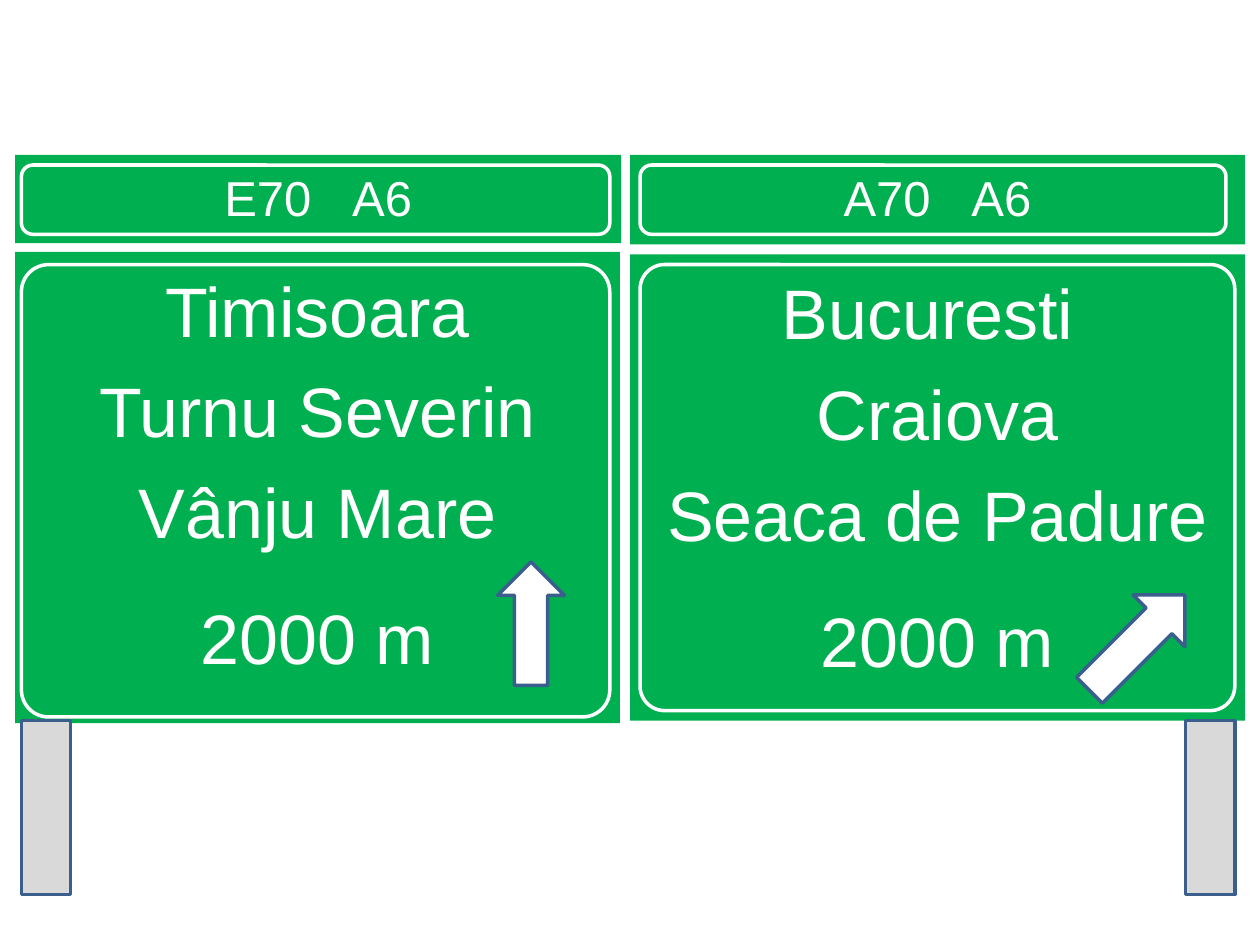
from pptx import Presentation
from pptx.dml.color import RGBColor
from pptx.enum.shapes import MSO_SHAPE
from pptx.enum.text import MSO_ANCHOR, PP_ALIGN
from pptx.util import Inches, Pt

RECTANGLE = MSO_SHAPE.RECTANGLE
ROUNDED = MSO_SHAPE.ROUNDED_RECTANGLE
UP_ARROW = MSO_SHAPE.UP_ARROW
RIGHT_ARROW = MSO_SHAPE.RIGHT_ARROW
TOP, MIDDLE = MSO_ANCHOR.TOP, MSO_ANCHOR.MIDDLE
CENTER = PP_ALIGN.CENTER

THEME = {
    "font": "Arial",
    "green": RGBColor(0x00, 0xB0, 0x50),
    "white": RGBColor(0xFF, 0xFF, 0xFF),
    "grey": RGBColor(0xD9, 0xD9, 0xD9),
    "blue": RGBColor(0x3A, 0x5F, 0x8C),
    "line": 2,
    "route_size": 28,
    "place_size": 40,
    "first_space": 4,
    "place_space": 9.6,
    "distance_space": 24,
    "route_gap": 15.6,
}

SIGNS = [
    {
        "routes": ["E70", "A6"],
        "places": ["Timisoara", "Turnu Severin", "Vânju Mare"],
        "distance": "2000 m",
        "route_panel": (0.12, 1.23, 4.81, 0.7),
        "place_panel": (0.12, 2, 4.8, 3.74),
        "route_border": (0.17, 1.31, 4.67, 0.55),
        "place_border": (0.17, 2.1, 4.67, 3.59),
        "corner": 0.06,
        "arrow": (UP_ARROW, (3.95, 4.46, 0.53, 0.98), 0),
        "post_left": 0.17,
    },
    {
        "routes": ["A70", "A6"],
        "places": ["Bucuresti ", "Craiova", "Seaca de Padure"],
        "distance": "2000 m",
        "route_panel": (5, 1.23, 4.88, 0.71),
        "place_panel": (5, 2.02, 4.88, 3.7),
        "route_border": (5.08, 1.31, 4.65, 0.55),
        "place_border": (5.08, 2.1, 4.72, 3.54),
        "corner": 0.055,
        "arrow": (RIGHT_ARROW, (8.49, 4.81, 1.07, 0.58), 315),
        "post_left": 9.41,
    },
]
POST_TOP, POST_WIDTH, POST_HEIGHT = 5.72, 0.39, 1.38


def add_box(slide, kind, box, fill=None, line=None):
    shape = slide.shapes.add_shape(kind, *map(Inches, box))
    shape.shadow.inherit = False
    if fill is None:
        shape.fill.background()
    else:
        shape.fill.solid()
        shape.fill.fore_color.rgb = THEME[fill]
    if line is None:
        shape.line.fill.background()
    else:
        shape.line.color.rgb = THEME[line]
        shape.line.width = Pt(THEME["line"])
    return shape


def add_panel(slide, box, anchor, bottom_inset):
    frame = add_box(slide, RECTANGLE, box, fill="green").text_frame
    frame.word_wrap = True
    frame.vertical_anchor = anchor
    frame.margin_left = frame.margin_right = Inches(0.1)
    frame.margin_top = Inches(0.12)
    frame.margin_bottom = Inches(bottom_inset)
    return frame


def format_paragraph(paragraph, size, space):
    paragraph.alignment = CENTER
    paragraph.space_before = Pt(space)
    for run in paragraph.runs:
        run.font.name = THEME["font"]
        run.font.size = Pt(size)
        run.font.color.rgb = THEME["white"]


def add_routes(slide, sign):
    frame = add_panel(slide, sign["route_panel"], MIDDLE, 0.16)
    paragraph = frame.paragraphs[0]
    road, motorway = sign["routes"]
    for text in (road, " ", motorway):
        run = paragraph.add_run()
        run.text = text
        if text == " ":
            run._r.get_or_add_rPr().set("spc", str(round(THEME["route_gap"] * 100)))
    format_paragraph(paragraph, THEME["route_size"], THEME["first_space"])


def add_places(slide, sign):
    frame = add_panel(slide, sign["place_panel"], TOP, 0.05)
    lines = sign["places"] + [sign["distance"]]
    frame.text = "\n".join(lines)
    between = [THEME["place_space"]] * (len(lines) - 2)
    spaces = [THEME["first_space"], *between, THEME["distance_space"]]
    for paragraph, space in zip(frame.paragraphs, spaces):
        format_paragraph(paragraph, THEME["place_size"], space)


def add_sign(slide, sign):
    add_routes(slide, sign)
    add_places(slide, sign)
    kind, box, rotation = sign["arrow"]
    arrow = add_box(slide, kind, box, fill="white", line="blue")
    arrow.rotation = rotation
    post = (sign["post_left"], POST_TOP, POST_WIDTH, POST_HEIGHT)
    add_box(slide, RECTANGLE, post, fill="grey", line="blue")
    add_box(slide, ROUNDED, sign["route_border"], line="white")
    border = add_box(slide, ROUNDED, sign["place_border"], line="white")
    border.adjustments[0] = sign["corner"]


def main():
    presentation = Presentation()
    presentation.slide_width = Inches(10)
    presentation.slide_height = Inches(7.5)
    slide = presentation.slides.add_slide(presentation.slide_layouts[6])
    for sign in SIGNS:
        add_sign(slide, sign)
    presentation.save("out.pptx")


if __name__ == "__main__":
    main()
